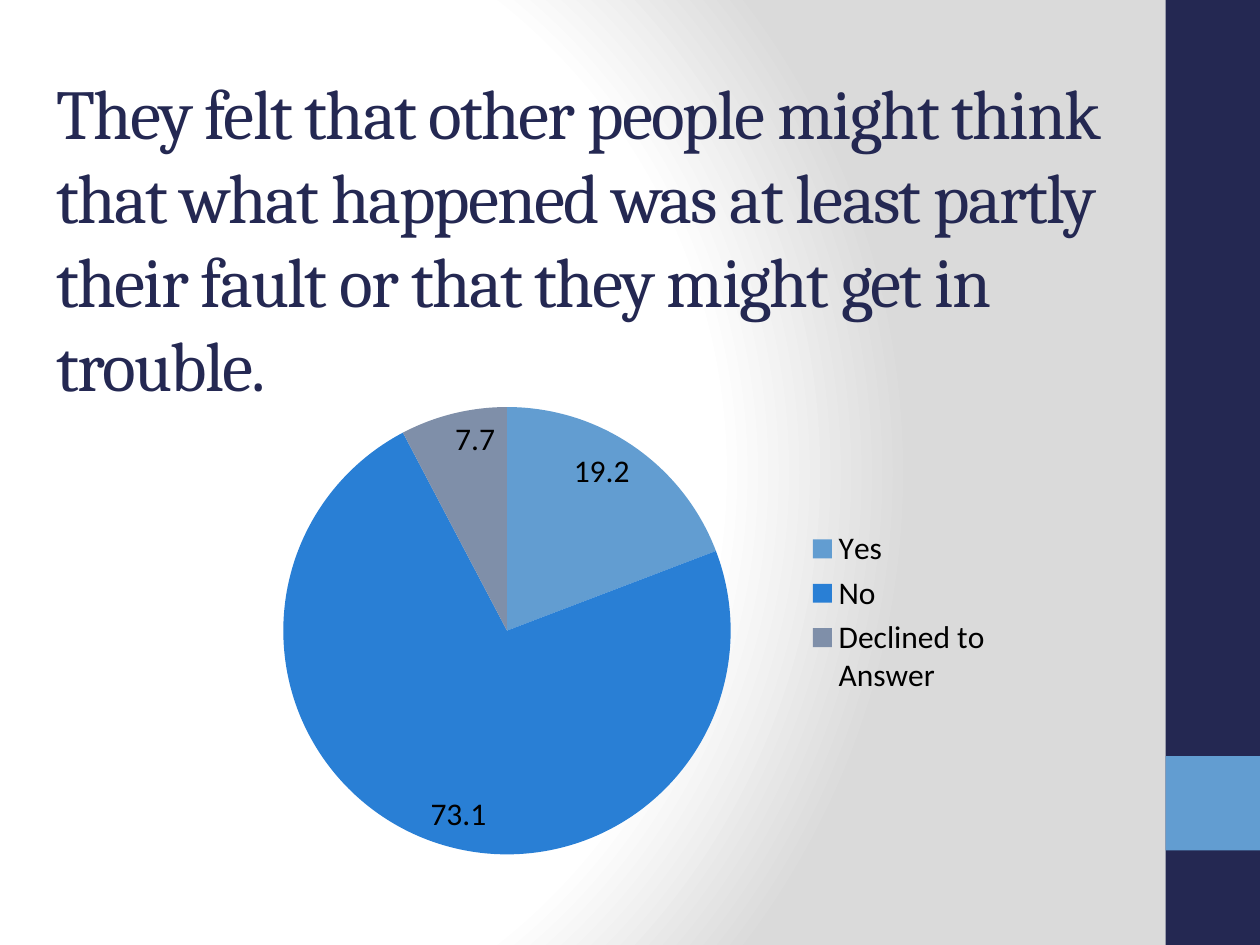
from pptx import Presentation
from pptx.chart.data import CategoryChartData
from pptx.dml.color import RGBColor
from pptx.enum.chart import XL_CHART_TYPE, XL_LABEL_POSITION, XL_LEGEND_POSITION
from pptx.enum.shapes import MSO_SHAPE
from pptx.enum.text import MSO_ANCHOR
from pptx.oxml import parse_xml
from pptx.oxml.ns import nsdecls
from pptx.util import Inches, Pt

PIE = XL_CHART_TYPE.PIE
LABEL_INSIDE = XL_LABEL_POSITION.INSIDE_END
LEGEND_RIGHT = XL_LEGEND_POSITION.RIGHT
RECTANGLE = MSO_SHAPE.RECTANGLE
MIDDLE = MSO_ANCHOR.MIDDLE

COLORS = {
    "white": "FFFFFF",
    "gray": "DADADA",
    "navy": "242852",
    "sky": "629DD1",
    "blue": "297FD5",
    "slate": "7F8FA9",
    "black": "000000",
}
TITLE = (
    "They felt that other people might think that what happened was "
    "at least partly their fault or that they might get in trouble."
)
ANSWERS = [
    ("Yes", 19.2, "sky"),
    ("No", 73.1, "blue"),
    ("Declined to Answer", 7.7, "slate"),
]
SIDE_BARS = [(0, 7.5, "navy"), (6, 0.75, "sky")]
BACKGROUND_STOPS = [(0, "white"), (75, "white"), (100, "gray")]
PLOT_AREA = {"x": 0.08, "y": 0.11, "w": 0.57, "h": 0.85}


def rgb(name):
    return RGBColor.from_string(COLORS[name])


def set_background(page):
    stops = "".join(
        f'<a:gs pos="{position * 1000}"><a:srgbClr val="{COLORS[name]}"/></a:gs>'
        for position, name in BACKGROUND_STOPS
    )
    background = parse_xml(
        f'<p:bg {nsdecls("p", "a")}><p:bgPr><a:gradFill rotWithShape="1">'
        f"<a:gsLst>{stops}</a:gsLst>"
        '<a:path path="circle"><a:fillToRect l="20000" t="50000" r="100000" b="50000"/></a:path>'
        "</a:gradFill><a:effectLst/></p:bgPr></p:bg>"
    )
    page.element.cSld.insert(0, background)


def add_side_bars(page):
    for top, height, color in SIDE_BARS:
        bar = page.shapes.add_shape(
            RECTANGLE, Inches(9.25), Inches(top), Inches(0.75), Inches(height)
        )
        bar.shadow.inherit = False
        bar.fill.solid()
        bar.fill.fore_color.rgb = rgb(color)
        bar.line.fill.background()


def add_title(page):
    box = page.shapes.add_textbox(Inches(0.35), Inches(0.45), Inches(8.71), Inches(2.87))
    frame = box.text_frame
    frame.word_wrap = True
    frame.vertical_anchor = MIDDLE
    frame.text = TITLE
    span = frame.paragraphs[0].runs[0]
    span.font.name = "Cambria"
    span.font.size = Pt(40)
    span.font.color.rgb = rgb("navy")
    span.font._element.set("spc", "-100")


def add_answer_chart(page):
    data = CategoryChartData()
    data.categories = [answer for answer, _, _ in ANSWERS]
    data.add_series("Series 1", [value for _, value, _ in ANSWERS])
    chart = page.shapes.add_chart(
        PIE, Inches(1.75), Inches(2.77), Inches(6.23), Inches(4.18), data
    ).chart
    chart.has_title = False
    chart.font.name = "Calibri"
    chart.font.size = Pt(18)
    chart.font.color.rgb = rgb("black")
    chart.has_legend = True
    chart.legend.position = LEGEND_RIGHT
    chart.legend.include_in_layout = False

    plot = chart.plots[0]
    plot.vary_by_categories = True
    for index, (_, _, color) in enumerate(ANSWERS):
        fill = plot.series[0].points[index].format.fill
        fill.solid()
        fill.fore_color.rgb = rgb(color)
    plot.has_data_labels = True
    labels = plot.data_labels
    labels.show_value = True
    labels.show_percentage = False
    labels.position = LABEL_INSIDE

    sizes = "".join(f'<c:{key} val="{value}"/>' for key, value in PLOT_AREA.items())
    layout = parse_xml(
        f'<c:layout {nsdecls("c")}><c:manualLayout><c:layoutTarget val="inner"/>'
        f'<c:xMode val="edge"/><c:yMode val="edge"/>{sizes}</c:manualLayout></c:layout>'
    )
    plot_area = chart.element.chart.plotArea
    for automatic in plot_area.xpath("c:layout"):
        plot_area.remove(automatic)
    plot_area.insert(0, layout)


def main():
    deck = Presentation()
    deck.slide_width = Inches(10)
    deck.slide_height = Inches(7.5)
    page = deck.slides.add_slide(deck.slide_layouts[6])
    set_background(page)
    add_side_bars(page)
    add_title(page)
    add_answer_chart(page)
    deck.save("out.pptx")


if __name__ == "__main__":
    main()
